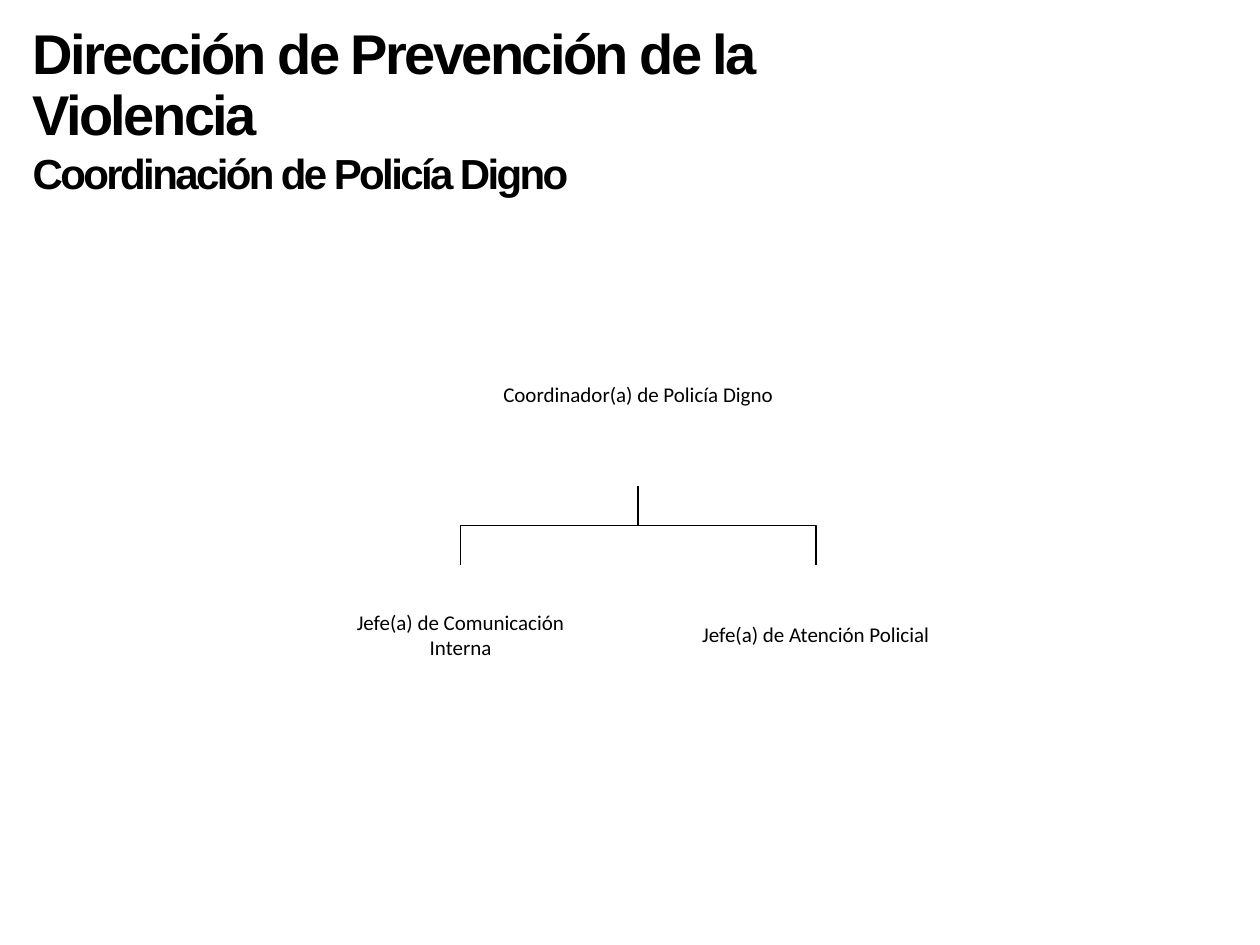
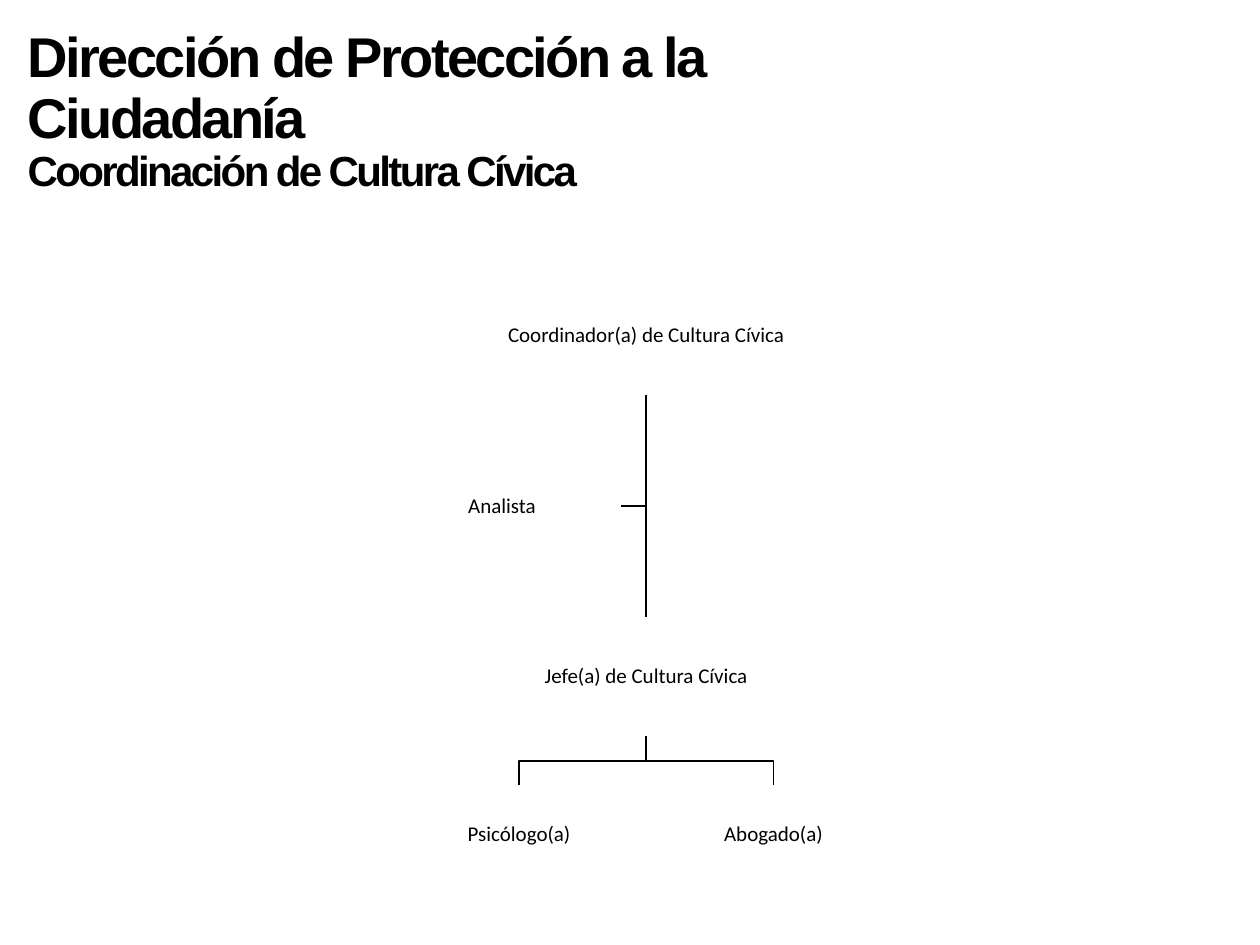
from lxml import etree
from pptx import Presentation
from pptx.dml.color import RGBColor
from pptx.enum.shapes import MSO_CONNECTOR, MSO_SHAPE
from pptx.enum.text import MSO_ANCHOR as Anchor, MSO_AUTO_SIZE as AutoSize, PP_ALIGN as Align
from pptx.oxml.ns import qn
from pptx.util import Pt

BLACK, WHITE = "000000", "FFFFFF"
TITLE_FONT, BOX_FONT = "Arial", "Calibri"

# Content: each post is (text, centre x, top, width, height) in points
# Links are (kind, superior, subordinate)
CHARTS = [
    {
        "title": "Dirección de Prevención de la Violencia",
        "subtitle": "Coordinación de Policía Digno",
        "title_at": (11.5, 11.5, 546, 106),
        "subtitle_spacing": 1.0,
        "post_spacing": 1.0,
        "posts": {
            "coordinador": ("Coordinador(a) de Policía Digno", 364.7, 172, 211, 106),
            "comunicación": ("Jefe(a) de Comunicación Interna", 263.2, 322.6, 142, 80),
            "atención": ("Jefe(a) de Atención Policial", 466.2, 322.6, 142, 80),
        },
        "links": [
            ("branch", "coordinador", "atención"),
            ("branch", "coordinador", "comunicación"),
        ],
    },
    {
        "title": "Dirección de Protección a la Ciudadanía",
        "subtitle": "Coordinación de Cultura Cívica",
        "title_at": (8.6, 13, 537, 103),
        "subtitle_spacing": 0.9,
        "post_spacing": 0.9,
        "posts": {
            "coordinador": ("Coordinador(a) de Cultura Cívica", 369.3, 157.8, 163.4, 68.2),
            "jefe": ("Jefe(a) de Cultura Cívica", 369.3, 352.6, 128, 68.2),
            "psicólogo": ("Psicólogo(a)", 296.6, 448.6, 116.6, 56.2),
            "abogado": ("Abogado(a)", 442, 448.6, 116.6, 56.2),
            "analista": ("Analista", 286.9, 255.2, 136, 68.2),
        },
        "links": [
            ("side", "coordinador", "analista"),
            ("branch", "jefe", "abogado"),
            ("branch", "jefe", "psicólogo"),
            ("straight", "coordinador", "jefe"),
        ],
    },
]


def rgb(code):
    return RGBColor.from_string(code)


def write(paragraph, text, font, size, align, bold=False, line_spacing=1.0, tracking=None):
    paragraph.alignment = align
    paragraph.line_spacing = line_spacing
    paragraph.space_before = paragraph.space_after = Pt(0)
    run = paragraph.add_run()
    run.text = text
    run.font.name, run.font.size, run.font.bold = font, Pt(size), bold
    run.font.color.rgb = rgb(BLACK)
    if tracking is not None:
        run.font._element.set("spc", str(round(tracking * 100)))


def draw_line_style(line):
    line.color.rgb = rgb(BLACK)
    line.width = Pt(1)


def add_heading(slide, chart):
    heading = slide.shapes.title
    heading.left, heading.top, heading.width, heading.height = map(Pt, chart["title_at"])
    frame = heading.text_frame
    frame.word_wrap, frame.auto_size = True, AutoSize.NONE
    frame.vertical_anchor = Anchor.TOP
    style = dict(font=TITLE_FONT, align=Align.LEFT, bold=True, tracking=-1.5)
    write(frame.paragraphs[0], chart["title"], size=32, line_spacing=0.9, **style)
    write(frame.add_paragraph(), chart["subtitle"], size=24,
          line_spacing=chart["subtitle_spacing"], **style)


def add_post(slide, post, line_spacing):
    text, centre, top, width, height = post
    box = slide.shapes.add_shape(MSO_SHAPE.RECTANGLE, Pt(centre - width / 2), Pt(top),
                                 Pt(width), Pt(height))
    box.shadow.inherit = False
    box.fill.solid()
    box.fill.fore_color.rgb = rgb(WHITE)
    box.line.fill.background()
    frame = box.text_frame
    frame.word_wrap, frame.vertical_anchor = True, Anchor.MIDDLE
    frame.margin_left = frame.margin_right = frame.margin_top = frame.margin_bottom = Pt(0.6)
    write(frame.paragraphs[0], text, BOX_FONT, 12, Align.CENTER, line_spacing=line_spacing)
    return box


def add_link(slide, kind, superior, subordinate):
    start_x, start_y = superior.left + superior.width // 2, superior.top + superior.height
    end_x, end_y = subordinate.left + subordinate.width // 2, subordinate.top
    if kind == "straight":
        link = slide.shapes.add_connector(MSO_CONNECTOR.STRAIGHT, start_x, start_y, end_x, end_y)
        link.begin_connect(superior, 2)
        link.end_connect(subordinate, 0)
        etree.SubElement(link._element.spPr, qn("a:effectLst"))
        draw_line_style(link.line)
        return
    if kind == "side":
        side_y = subordinate.top + subordinate.height // 2
        bends = [(start_x, side_y), (subordinate.left + subordinate.width, side_y)]
    else:
        middle_y = (start_y + end_y) // 2
        bends = [(start_x, middle_y), (end_x, middle_y), (end_x, end_y)]
    outline = slide.shapes.build_freeform(start_x, start_y)
    outline.add_line_segments(bends, close=False)
    link = outline.convert_to_shape()
    link.shadow.inherit = False
    link.fill.background()
    draw_line_style(link.line)


def main():
    deck = Presentation()
    deck.slide_width, deck.slide_height = Pt(720), Pt(540)
    for chart in CHARTS:
        slide = deck.slides.add_slide(deck.slide_layouts[5])
        slide.background.fill.solid()
        slide.background.fill.fore_color.rgb = rgb(WHITE)
        add_heading(slide, chart)
        boxes = {role: add_post(slide, post, chart["post_spacing"])
                 for role, post in chart["posts"].items()}
        for kind, superior, subordinate in chart["links"]:
            add_link(slide, kind, boxes[superior], boxes[subordinate])
    deck.save("out.pptx")


if __name__ == "__main__":
    main()
